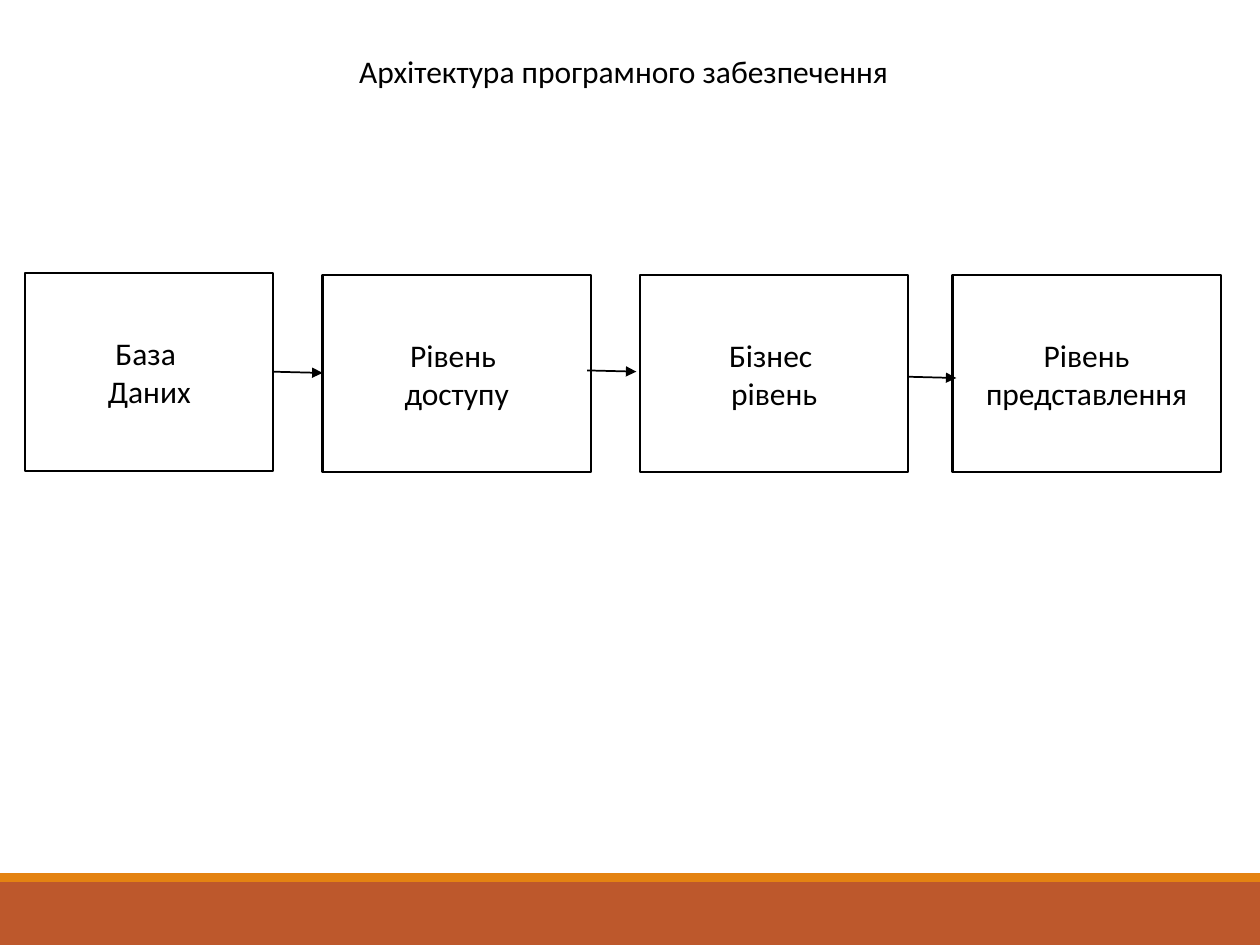
from lxml.etree import SubElement
from pptx import Presentation
from pptx.dml.color import RGBColor
from pptx.enum.shapes import MSO_CONNECTOR, MSO_SHAPE
from pptx.enum.text import MSO_ANCHOR, MSO_AUTO_SIZE, PP_ALIGN
from pptx.oxml.ns import qn
from pptx.util import Inches, Pt

BLACK = RGBColor(0x00, 0x00, 0x00)
WHITE = RGBColor(0xFF, 0xFF, 0xFF)
RUST = RGBColor(0xBD, 0x58, 0x2C)
ORANGE = RGBColor(0xE4, 0x83, 0x12)
FONT_FORMAT = {"name": "Calibri", "size": Pt(18), "bold": False}
TITLE_FRAME_FORMAT = {
    "word_wrap": False,
    "auto_size": MSO_AUTO_SIZE.SHAPE_TO_FIT_TEXT,
    "vertical_anchor": MSO_ANCHOR.TOP,
}


def format_paragraph(paragraph, alignment):
    paragraph.alignment = alignment
    for name, value in FONT_FORMAT.items():
        setattr(paragraph.font, name, value)
    paragraph.font.color.rgb = BLACK


def add_rectangle(left, top, width, height, color):
    shape = slide.shapes.add_shape(
        MSO_SHAPE.RECTANGLE, Inches(left), Inches(top), Inches(width), Inches(height)
    )
    shape.shadow.inherit = False
    shape.fill.solid()
    shape.fill.fore_color.rgb = color
    shape.line.fill.background()
    return shape


presentation = Presentation()
presentation.slide_width = Inches(10)
presentation.slide_height = Inches(7.5)
slide = presentation.slides.add_slide(presentation.slide_layouts[5])

add_rectangle(0, 7, 10, 0.5, RUST)
add_rectangle(0, 6.93, 10, 0.07, ORANGE)

layers = [
    (0.2, 2.17, 1.97, ["База ", "Даних"]),
    (2.56, 2.18, 2.13, ["Рівень ", "доступу"]),
    (5.08, 2.18, 2.13, ["Бізнес ", "рівень"]),
    (7.56, 2.18, 2.13, ["Рівень", "представлення"]),
]
for left, top, width, lines in layers:
    box = add_rectangle(left, top, width, 1.57, WHITE)
    box.line.color.rgb = BLACK
    box.line.width = Pt(1.25)
    box.text_frame.vertical_anchor = MSO_ANCHOR.MIDDLE
    box.text_frame.text = "\n".join(lines)
    for paragraph in box.text_frame.paragraphs:
        format_paragraph(paragraph, PP_ALIGN.CENTER)

for left, top in [(2.17, 2.95), (4.66, 2.94), (7.2, 2.99)]:
    arrow = slide.shapes.add_connector(
        MSO_CONNECTOR.STRAIGHT,
        Inches(left), Inches(top), Inches(left + 0.39), Inches(top + 0.01),
    )
    arrow.line.color.rgb = BLACK
    arrow.line.width = Pt(1)
    SubElement(arrow.line._get_or_add_ln(), qn("a:tailEnd"), type="triangle")
    SubElement(arrow._element.spPr, qn("a:effectLst"))

title = slide.shapes.title
title_place = {"left": 2.75, "top": 0.36, "width": 4.45, "height": 0.4}
for name, value in title_place.items():
    setattr(title, name, Inches(value))
for name, value in TITLE_FRAME_FORMAT.items():
    setattr(title.text_frame, name, value)
title.text_frame.text = "Архітектура програмного забезпечення"
format_paragraph(title.text_frame.paragraphs[0], PP_ALIGN.LEFT)

presentation.save("out.pptx")
